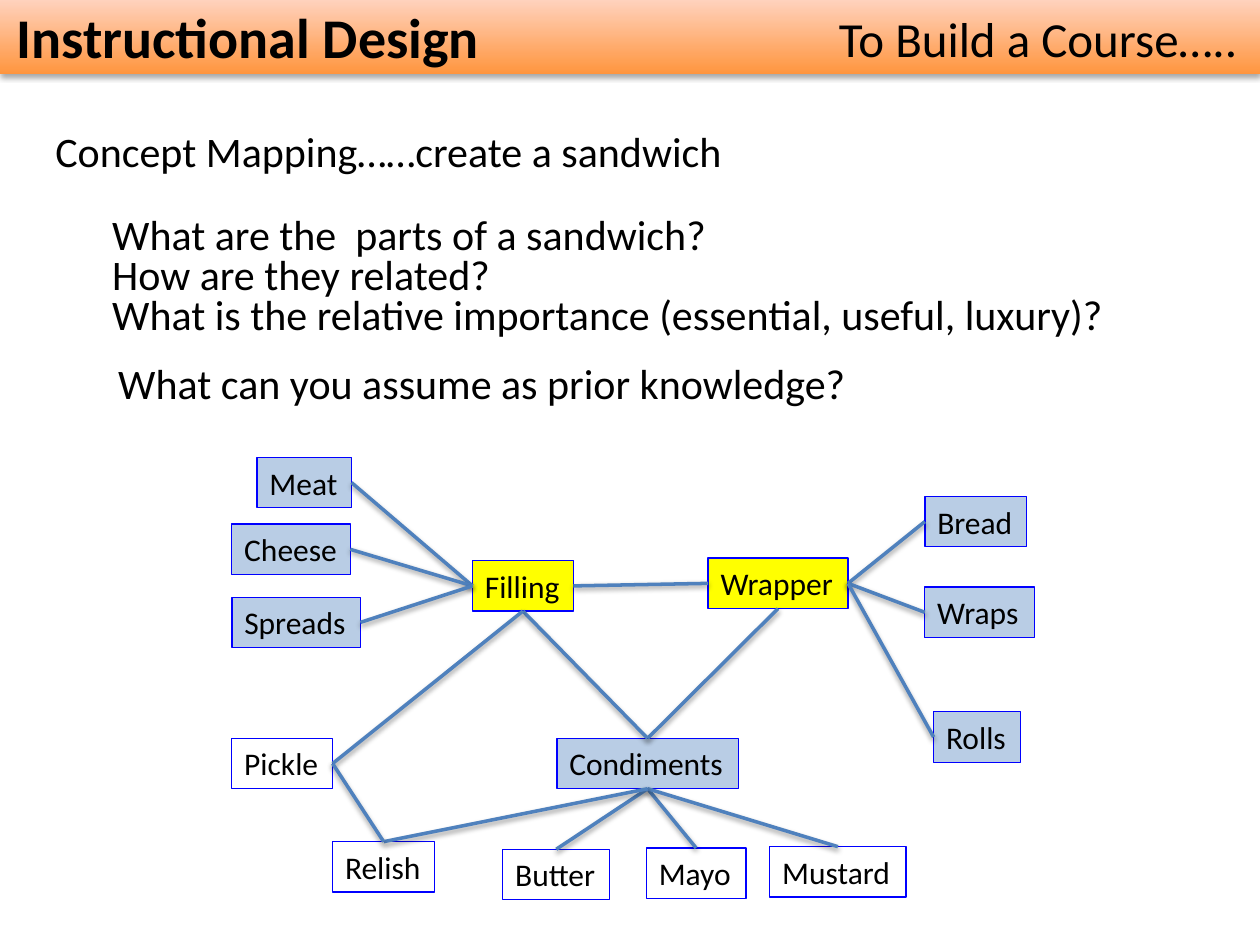
from typing import NamedTuple

from lxml import etree
from pptx import Presentation
from pptx.dml.color import RGBColor
from pptx.enum.shapes import MSO_CONNECTOR, MSO_SHAPE
from pptx.enum.text import MSO_ANCHOR, MSO_AUTO_SIZE, PP_ALIGN
from pptx.oxml.ns import qn
from pptx.util import Inches, Pt

RECTANGLE, STRAIGHT = MSO_SHAPE.RECTANGLE, MSO_CONNECTOR.STRAIGHT
FIT_SHAPE, ANCHOR_TOP, ALIGN_LEFT = MSO_AUTO_SIZE.SHAPE_TO_FIT_TEXT, MSO_ANCHOR.TOP, PP_ALIGN.LEFT
TOP, LEFT, BOTTOM, RIGHT = range(4)  # connection sites of a rectangle

BLACK, YELLOW, PALE_BLUE = "000000", "FFFF00", "B9CDE5"
NODE_EDGE, LINK_BLUE = "0000FF", "4F81BD"
BAR_DARK, BAR_LIGHT = "FF953E", "FFD2BD"
NODE_HEIGHT = 0.4


class Box(NamedTuple):
    left: float
    top: float
    width: float
    height: float


class Node(NamedTuple):
    label: str
    left: float
    top: float
    width: float
    fill: str | None = None


class Link(NamedTuple):
    start: str
    start_site: int
    end: str
    end_site: int


NODES = [
    Node("Wrapper", 5.62, 4.43, 1.11, YELLOW),
    Node("Filling", 3.75, 4.45, 0.8, YELLOW),
    Node("Bread", 7.34, 3.94, 0.81, PALE_BLUE),
    Node("Wraps", 7.34, 4.66, 0.87, PALE_BLUE),
    Node("Rolls", 7.41, 5.65, 0.69, PALE_BLUE),
    Node("Meat", 2.04, 3.63, 0.75, PALE_BLUE),
    Node("Cheese", 1.84, 4.16, 0.94, PALE_BLUE),
    Node("Spreads", 1.84, 4.74, 1.02, PALE_BLUE),
    Node("Condiments", 4.42, 5.86, 1.44, PALE_BLUE),
    Node("Butter", 3.99, 6.74, 0.85),
    Node("Mayo", 5.13, 6.73, 0.79),
    Node("Mustard", 6.11, 6.72, 1.08),
    Node("Relish", 2.64, 6.68, 0.81),
    Node("Pickle", 1.84, 5.86, 0.8),
]
LINKS = [
    Link("Filling", RIGHT, "Wrapper", LEFT),
    *(Link(bread, LEFT, "Wrapper", RIGHT) for bread in ("Bread", "Wraps", "Rolls")),
    *(Link(filling, RIGHT, "Filling", LEFT) for filling in ("Meat", "Cheese", "Spreads")),
    Link("Condiments", TOP, "Wrapper", BOTTOM),
    Link("Condiments", TOP, "Filling", BOTTOM),
    *(Link(sauce, TOP, "Condiments", BOTTOM) for sauce in ("Mayo", "Mustard", "Butter")),
    Link("Pickle", RIGHT, "Filling", BOTTOM),
    Link("Relish", TOP, "Condiments", BOTTOM),
    Link("Relish", TOP, "Pickle", RIGHT),
]
QUESTIONS = [
    "What are the  parts of a sandwich?",
    "How are they related?",
    "What is the relative importance (essential, useful, luxury)?",
]


def color(hex_value: str) -> RGBColor:
    return RGBColor.from_string(hex_value)


def place(shape, box: Box) -> None:
    for side, length in box._asdict().items():
        setattr(shape, side, Inches(length))


def write(shape, lines: list[str], size: float, bold: bool = False, spacing: float = 1.0) -> None:
    """Fill a shape with plain left-aligned paragraphs."""
    frame = shape.text_frame
    frame.text = "\n".join(lines)
    frame_format = {"word_wrap": False, "auto_size": FIT_SHAPE, "vertical_anchor": ANCHOR_TOP}
    paragraph_format = {"alignment": ALIGN_LEFT, "line_spacing": spacing, "space_before": Pt(0)}
    font_format = {"name": "Calibri", "size": Pt(size), "bold": bold}
    for name, value in frame_format.items():
        setattr(frame, name, value)
    for paragraph in frame.paragraphs:
        for name, value in paragraph_format.items():
            setattr(paragraph, name, value)
        for run in paragraph.runs:
            for name, value in font_format.items():
                setattr(run.font, name, value)
            run.font.color.rgb = color(BLACK)


def remove_bullets(shape) -> None:
    for paragraph in shape.text_frame.paragraphs:
        properties = paragraph._p.get_or_add_pPr()
        properties.set("marL", "0")
        properties.set("indent", "0")
        etree.SubElement(properties, qn("a:buNone"))


def add_shadow(shape, distance: float, opacity: int) -> None:
    """Cast a soft black shadow straight down."""
    effects = etree.SubElement(shape._element.spPr, qn("a:effectLst"))
    shadow = etree.SubElement(
        effects, qn("a:outerShdw"), blurRad=str(Pt(3.1)), dist=str(Pt(distance)),
        dir="5400000", rotWithShape="0")
    black = etree.SubElement(shadow, qn("a:srgbClr"), val=BLACK)
    etree.SubElement(black, qn("a:alpha"), val=str(opacity * 1000))


def add_label(slide, text: str, box: Box, size: float) -> None:
    label = slide.shapes.add_textbox(*map(Inches, box))
    write(label, [text], size)


def add_header_bar(slide) -> None:
    bar = slide.shapes.add_shape(RECTANGLE, *map(Inches, Box(0, 0, 10, 0.59)))
    bar.fill.gradient()
    bar.fill.gradient_angle = 90
    for stop, shade in zip(bar.fill.gradient_stops, (BAR_DARK, BAR_LIGHT)):
        stop.color.rgb = color(shade)
    bar.line.fill.background()
    add_shadow(bar, 1.8, 35)
    slide.shapes._spTree.insert(2, bar._element)  # behind the title


def add_node(slide, node: Node):
    box = Box(node.left, node.top, node.width, NODE_HEIGHT)
    shape = slide.shapes.add_shape(RECTANGLE, *map(Inches, box))
    shape.shadow.inherit = False
    if node.fill:
        shape.fill.solid()
        shape.fill.fore_color.rgb = color(node.fill)
    else:
        shape.fill.background()
    shape.line.color.rgb = color(NODE_EDGE)
    shape.line.width = Pt(0.75)
    write(shape, [node.label], 18)
    return shape


def add_link(slide, link: Link, nodes: dict) -> None:
    line = slide.shapes.add_connector(STRAIGHT, 0, 0, 0, 0)
    line.begin_connect(nodes[link.start], link.start_site)
    line.end_connect(nodes[link.end], link.end_site)
    line.line.color.rgb = color(LINK_BLUE)
    line.line.width = Pt(2)
    add_shadow(line, 1.6, 38)


def main() -> None:
    deck = Presentation()
    deck.slide_width, deck.slide_height = Inches(10), Inches(7.5)
    slide = deck.slides.add_slide(deck.slide_layouts[1])

    # Header
    add_header_bar(slide)
    title, questions = slide.placeholders
    place(title, Box(0.03, -0.03, 3.91, 0.64))
    write(title, ["Instructional Design"], 32, bold=True)
    add_label(slide, "To Build a Course…..", Box(6.56, 0.02, 3.44, 0.57), 28)

    # Topic and questions
    add_label(slide, "Concept Mapping……create a sandwich", Box(0.34, 0.95, 5.65, 0.5), 24)
    place(questions, Box(0.79, 1.68, 8.17, 1.08))
    write(questions, QUESTIONS, 24, spacing=0.8)
    remove_bullets(questions)
    add_label(slide, "What can you assume as prior knowledge?", Box(0.84, 2.79, 6.04, 0.5), 24)

    # Concept map
    nodes = {node.label: add_node(slide, node) for node in NODES}
    for link in LINKS:
        add_link(slide, link, nodes)

    deck.save("out.pptx")


if __name__ == "__main__":
    main()
